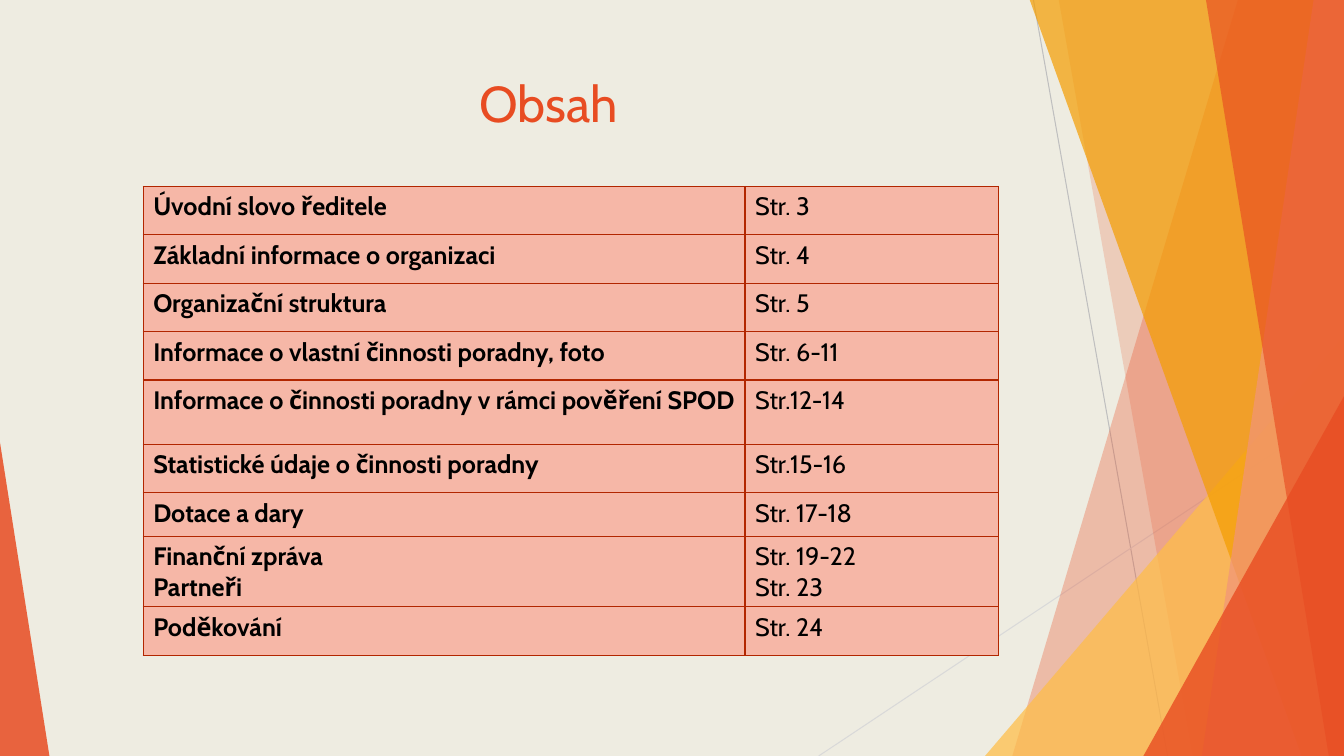
from lxml.etree import SubElement
from pptx import Presentation
from pptx.dml.color import RGBColor
from pptx.enum.shapes import MSO_CONNECTOR, MSO_SHAPE
from pptx.enum.text import MSO_ANCHOR, PP_ALIGN
from pptx.oxml.ns import qn
from pptx.util import Inches, Pt

FONT = "Cabin"
COLORS = {
    "background": "EEECE1",
    "orange_red": "E84C22",
    "amber": "F49D00",
    "yellow": "FFBD47",
    "salmon": "F1947A",
    "cell": "F6B7A7",
    "border": "B22600",
    "text": "000000",
    "gray": "BFBFBF",
    "light_gray": "D9D9D9",
}
TOP, RIGHT, BOTTOM = -0.01, 13.33, 7.5

CONTENTS = [
    (["Úvodní slovo ředitele"], ["Str. 3"], 0.48),
    (["Základní informace o organizaci"], ["Str. 4"], 0.48),
    (["Organizační struktura"], ["Str. 5"], 0.48),
    (["Informace o vlastní činnosti poradny, foto"], ["Str. 6-11"], 0.48),
    (["Informace o činnosti poradny v rámci pověření SPOD"], ["Str.12-14"], 0.64),
    (["Statistické údaje o činnosti poradny"], ["Str.15-16"], 0.48),
    (["Dotace a dary"], ["Str. 17-18"], 0.43),
    (["Finanční zpráva", "Partneři"], ["Str. 19-22", "Str. 23"], 0.49),
    (["Poděkování"], ["Str. 24"], 0.48),
]


def rgb(color):
    return RGBColor.from_string(COLORS[color])


def paint(shape, color, opacity):
    shape.shadow.inherit = False
    shape.line.fill.background()
    shape.fill.solid()
    shape.fill.fore_color.rgb = rgb(color)
    color_element = shape._element.spPr.find(qn("a:solidFill"))[0]
    SubElement(color_element, qn("a:alpha")).set("val", str(opacity * 1000))


def add_line(slide, start, end, color):
    points = [Inches(value) for value in (*start, *end)]
    line = slide.shapes.add_connector(MSO_CONNECTOR.STRAIGHT, *points)
    line.line.color.rgb = rgb(color)
    line.line.width = Pt(0.75)
    SubElement(line._element.spPr, qn("a:effectLst"))


def add_right_band(slide, top_left, bottom_left, color, opacity):
    corners = [(top_left, TOP), (RIGHT, TOP), (RIGHT, BOTTOM), (bottom_left, BOTTOM)]
    points = [(Inches(x), Inches(y)) for x, y in corners]
    builder = slide.shapes.build_freeform(*points[0])
    builder.add_line_segments(points[1:], close=True)
    paint(builder.convert_to_shape(), color, opacity)


def add_triangle(slide, left, top, width, apex, color, opacity):
    triangle = slide.shapes.add_shape(
        MSO_SHAPE.ISOSCELES_TRIANGLE,
        Inches(left), Inches(top), Inches(width), Inches(BOTTOM - top),
    )
    triangle.adjustments[0] = apex
    paint(triangle, color, opacity)


def add_run(paragraph, text, size, color, bold=False):
    run = paragraph.add_run()
    run.text = text
    run.font.name = FONT
    run.font.size = Pt(size)
    run.font.bold = bold
    run.font.color.rgb = rgb(color)


def add_title(slide, text):
    box = slide.shapes.add_textbox(Inches(0.74), Inches(0.67), Inches(9.4), Inches(1.44))
    frame = box.text_frame
    frame.word_wrap = True
    frame.vertical_anchor = MSO_ANCHOR.TOP
    paragraph = frame.paragraphs[0]
    paragraph.alignment = PP_ALIGN.CENTER
    add_run(paragraph, text, 36, "orange_red")


def set_borders(cell):
    properties = cell._tc.get_or_add_tcPr()
    for position, side in enumerate(("a:lnL", "a:lnR", "a:lnT", "a:lnB")):
        border = properties.makeelement(qn(side), {"w": str(Pt(1))})
        fill = SubElement(border, qn("a:solidFill"))
        SubElement(fill, qn("a:srgbClr")).set("val", COLORS["border"])
        properties.insert(position, border)


def fill_cell(cell, lines, bold):
    cell.fill.solid()
    cell.fill.fore_color.rgb = rgb("cell")
    cell.margin_right = Inches(0.05)
    set_borders(cell)
    frame = cell.text_frame
    for index, line in enumerate(lines):
        paragraph = frame.add_paragraph() if index else frame.paragraphs[0]
        add_run(paragraph, line, 18, "text", bold)


def add_contents_table(slide):
    widths = (5.97, 2.51)
    height = sum(row_height for _, _, row_height in CONTENTS)
    table = slide.shapes.add_table(
        len(CONTENTS), len(widths),
        Inches(1.42), Inches(1.85), Inches(sum(widths)), Inches(height),
    ).table
    table.first_row = False
    table.horz_banding = False
    for column, width in zip(table.columns, widths):
        column.width = Inches(width)
    for row, (chapters, pages, row_height) in zip(table.rows, CONTENTS):
        row.height = Inches(row_height)
        fill_cell(row.cells[0], chapters, True)
        fill_cell(row.cells[1], pages, False)


def add_decoration(slide):
    add_line(slide, (10.25, 0), (11.58, BOTTOM), "gray")
    add_line(slide, (RIGHT, 4.03), (8.12, BOTTOM), "light_gray")
    add_right_band(slide, 12.28, 10.04, "orange_red", 30)
    add_right_band(slide, 10.5, 11.83, "orange_red", 20)
    add_triangle(slide, 9.77, 3.33, 3.56, 1, "yellow", 72)
    add_right_band(slide, 10.21, 12.91, "amber", 70)
    add_right_band(slide, 13.03, 11.92, "salmon", 70)
    add_right_band(slide, 11.96, 13.18, "orange_red", 65)
    add_triangle(slide, 11.34, 3.93, 1.99, 1, "orange_red", 80)
    add_triangle(slide, 0, 4.39, 0.49, 0, "orange_red", 85)


def main():
    presentation = Presentation()
    presentation.slide_width = Inches(RIGHT)
    presentation.slide_height = Inches(BOTTOM)
    slide = presentation.slides.add_slide(presentation.slide_layouts[6])
    slide.background.fill.solid()
    slide.background.fill.fore_color.rgb = rgb("background")
    add_decoration(slide)
    add_title(slide, "Obsah")
    add_contents_table(slide)
    presentation.save("out.pptx")


if __name__ == "__main__":
    main()
